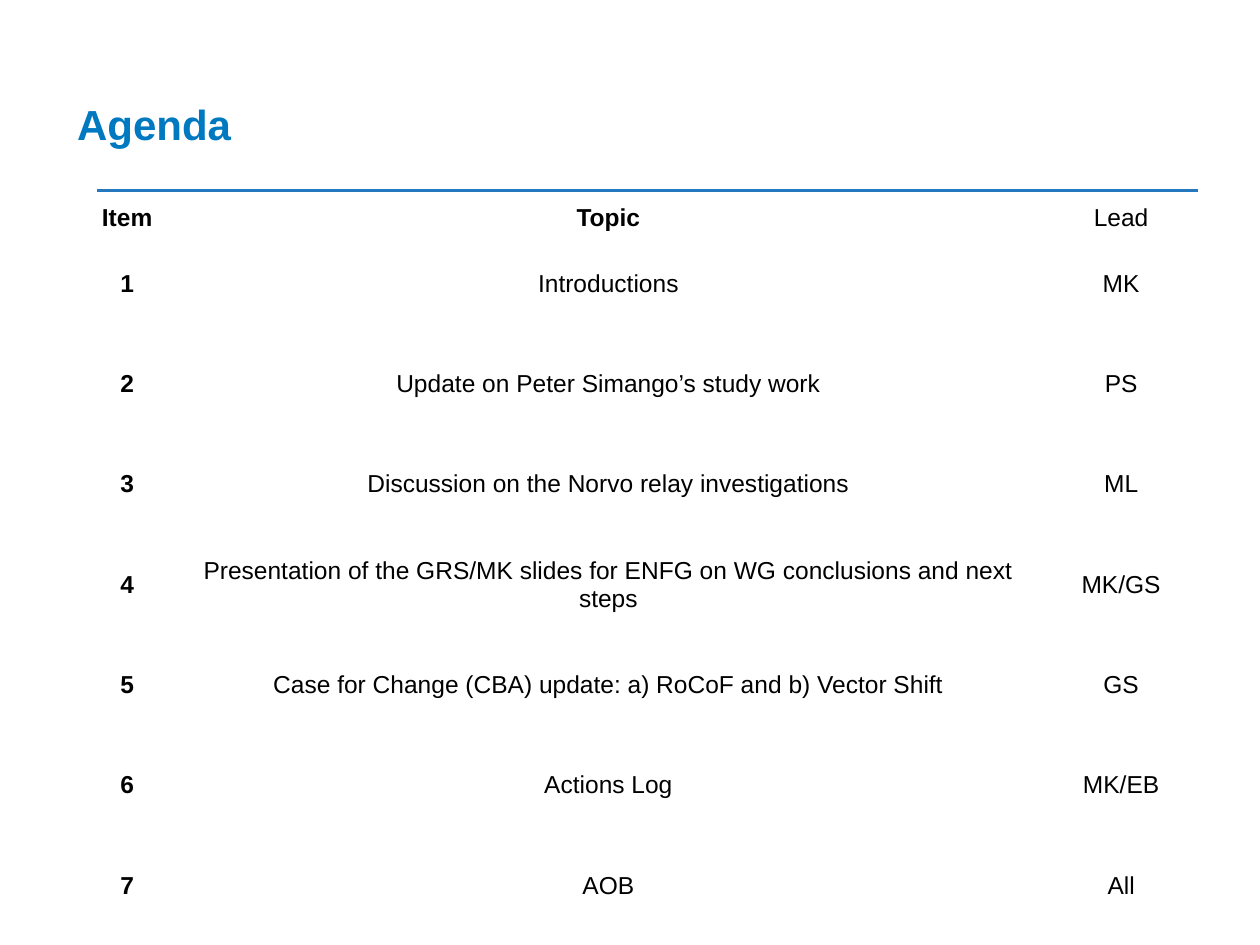
from lxml import etree
from pptx import Presentation
from pptx.dml.color import RGBColor
from pptx.enum.shapes import MSO_CONNECTOR
from pptx.enum.text import MSO_ANCHOR, PP_ALIGN
from pptx.oxml.ns import qn
from pptx.util import Pt

STRAIGHT = MSO_CONNECTOR.STRAIGHT
TOP, MIDDLE, BOTTOM = MSO_ANCHOR.TOP, MSO_ANCHOR.MIDDLE, MSO_ANCHOR.BOTTOM
CENTER = PP_ALIGN.CENTER

WHITE = RGBColor(0xFF, 0xFF, 0xFF)
BLACK = RGBColor(0x00, 0x00, 0x00)
TITLE_BLUE = RGBColor(0x00, 0x79, 0xC1)
RULE_BLUE = RGBColor(0x24, 0x78, 0xC0)

TITLE_FORMAT = {"name": "Arial", "size": Pt(24), "bold": True}
CELL_FORMAT = {"name": "Arial", "size": Pt(14)}
CELL_LAYOUT = {
    "margin_left": Pt(5),
    "margin_right": Pt(5),
    "margin_top": Pt(0),
    "margin_bottom": Pt(0),
}

COLUMN_WIDTHS = (49, 501, 85)
HEADER_HEIGHT = 16
AGENDA = (
    ("Item", "Topic", "Lead"),
    ("1", "Introductions", "MK"),
    ("2", "Update on Peter Simango’s study work", "PS"),
    ("3", "Discussion on the Norvo relay investigations", "ML"),
    ("4", "Presentation of the GRS/MK slides for ENFG on WG conclusions and next steps", "MK/GS"),
    ("5", "Case for Change (CBA) update: a) RoCoF and b) Vector Shift", "GS"),
    ("6", "Actions Log", "MK/EB"),
    ("7", "AOB", "All"),
)


def apply_format(target, values):
    """Set each named attribute of the target."""
    for name, value in values.items():
        setattr(target, name, value)


def add_title(slide, text, left, top, width, height):
    """Place the slide title at the bottom of its box."""
    shape = slide.shapes.add_textbox(Pt(left), Pt(top), Pt(width), Pt(height))
    frame = shape.text_frame
    apply_format(frame, {"word_wrap": True, "vertical_anchor": BOTTOM})
    paragraph = frame.paragraphs[0]
    paragraph.text = text
    apply_format(paragraph.font, TITLE_FORMAT)
    paragraph.font.color.rgb = TITLE_BLUE


def add_rule(slide, left, top, width):
    """Draw the horizontal rule under the title."""
    rule = slide.shapes.add_connector(STRAIGHT, Pt(left), Pt(top), Pt(left + width), Pt(top))
    rule.line.color.rgb = RULE_BLUE
    rule.line.width = Pt(1.5)
    etree.SubElement(rule._element.spPr, qn("a:effectLst"))


def set_borders(cell, widths):
    """Give the cell white borders of the widths listed by side."""
    properties = cell._tc.get_or_add_tcPr()
    for side, width in widths.items():
        border = etree.SubElement(properties, qn(f"a:ln{side}"), w=str(Pt(width)))
        fill = etree.SubElement(border, qn("a:solidFill"))
        etree.SubElement(fill, qn("a:srgbClr"), val=str(WHITE))


def fill_cell(cell, text, bold, anchor, borders):
    """Write and format one agenda cell."""
    apply_format(cell, {**CELL_LAYOUT, "vertical_anchor": anchor})
    set_borders(cell, borders)
    cell.fill.solid()
    cell.fill.fore_color.rgb = WHITE
    paragraph = cell.text_frame.paragraphs[0]
    paragraph.text = text
    paragraph.alignment = CENTER
    apply_format(paragraph.font, {**CELL_FORMAT, "bold": bold})
    paragraph.font.color.rgb = BLACK


def add_agenda(slide, left, top, width, height):
    """Build the agenda table with equal rows under its header."""
    shape = slide.shapes.add_table(
        len(AGENDA), len(COLUMN_WIDTHS), Pt(left), Pt(top), Pt(width), Pt(height)
    )
    table = shape.table
    apply_format(table, {"first_row": False, "horz_banding": False})
    for column, column_width in zip(table.columns, COLUMN_WIDTHS):
        column.width = Pt(column_width)
    item_height = (height - HEADER_HEIGHT) / (len(AGENDA) - 1)
    last = len(AGENDA) - 1
    for row_index, texts in enumerate(AGENDA):
        header = row_index == 0
        table.rows[row_index].height = Pt(HEADER_HEIGHT if header else item_height)
        borders = {
            "L": 1,
            "R": 1,
            "T": 3 if row_index in (1, last) else 1,
            "B": 3 if row_index in (0, last - 1) else 1,
        }
        for column_index, text in enumerate(texts):
            bold = column_index == 0 or (header and column_index == 1)
            cell = table.cell(row_index, column_index)
            fill_cell(cell, text, bold, TOP if header else MIDDLE, borders)


def main():
    """Build and save the agenda slide."""
    presentation = Presentation()
    apply_format(presentation, {"slide_width": Pt(720), "slide_height": Pt(540)})
    slide = presentation.slides.add_slide(presentation.slide_layouts[6])
    add_rule(slide, 55.4, 108.9, 629.3)
    add_title(slide, "Agenda", 37, 52.5, 648, 36)
    add_agenda(slide, 48.2, 116.6, sum(COLUMN_WIDTHS), 417.5)
    presentation.save("out.pptx")


if __name__ == "__main__":
    main()
